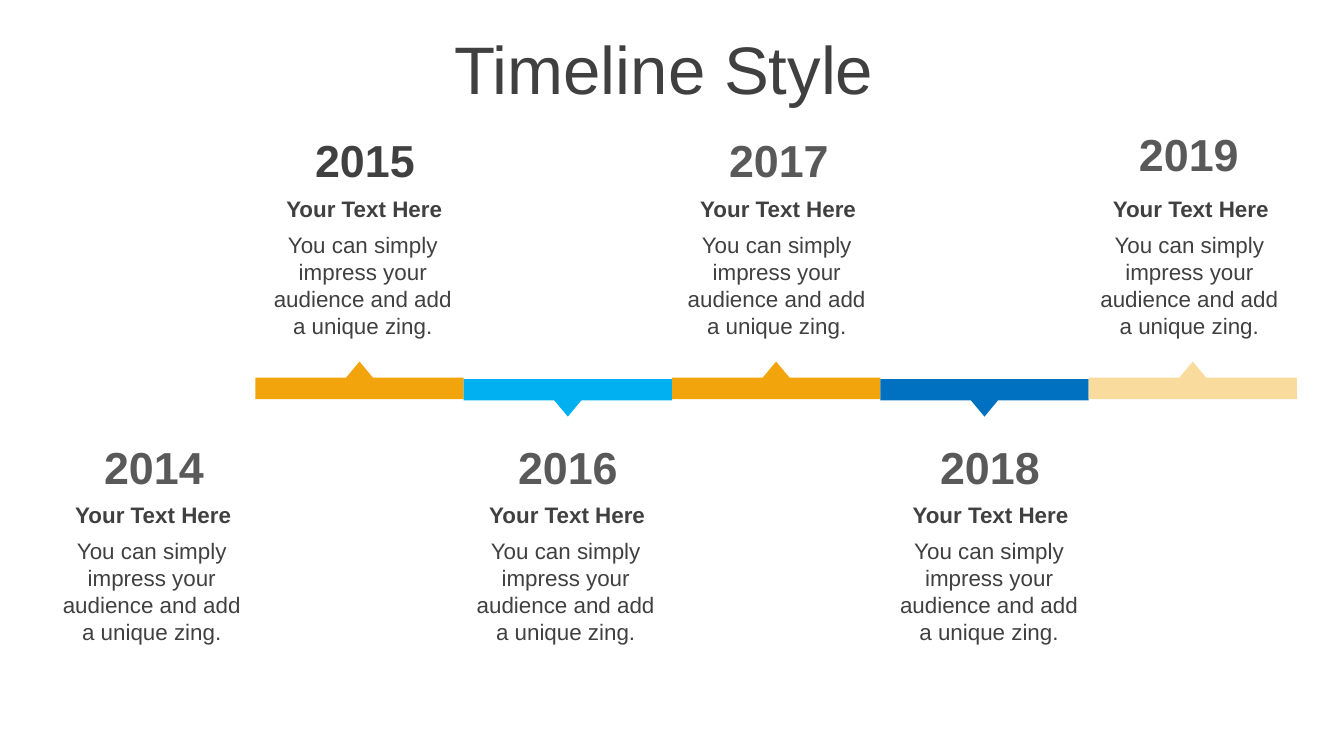
from pptx import Presentation
from pptx.dml.color import RGBColor
from pptx.enum.text import MSO_ANCHOR, PP_ALIGN
from pptx.util import Inches, Pt

CENTER = PP_ALIGN.CENTER
TOP, MIDDLE = MSO_ANCHOR.TOP, MSO_ANCHOR.MIDDLE

COLORS = {
    "dark": "404040", "gray": "595959", "orange": "F2A40D",
    "sky": "00B0F0", "blue": "0070C0", "sand": "FADB9E",
}
HEADING = "Your Text Here"
BODY = "You can simply impress your audience and add a unique zing."

# Year, left and top of the block, left and top of the year, year color
MILESTONES = [
    ("2014", 0.35, 3.22, 0.35, 3.22, "gray"),
    ("2015", 1.92, 0.94, 1.92, 0.94, "dark"),
    ("2016", 3.43, 3.22, 3.43, 3.22, "gray"),
    ("2017", 5.00, 0.94, 5.00, 0.94, "gray"),
    ("2018", 6.58, 3.22, 6.57, 3.22, "gray"),
    ("2019", 8.07, 0.94, 8.05, 0.89, "gray"),
]
SEGMENTS = ["orange", "sky", "orange", "blue", "sand"]


def rgb(name):
    return RGBColor.from_string(COLORS[name])


def add_text(s, text, x, y, w, h, size, color="dark", bold=False, anchor=TOP):
    tf = s.shapes.add_textbox(Inches(x), Inches(y), Inches(w), Inches(h)).text_frame
    tf.word_wrap = True
    tf.vertical_anchor = anchor
    p = tf.paragraphs[0]
    p.text = text
    p.alignment = CENTER
    p.font.name = "Arial"
    p.font.size = Pt(size)
    p.font.bold = bold
    p.font.color.rgb = rgb(color)


def add_segment(s, x, base, w, direction, color):
    """Bar with a pointer in its middle; direction is -1 for up, 1 for down."""
    bar, tip, half = 0.16, 0.28, 0.1
    mid = x + w / 2
    edge, point = base + direction * bar, base + direction * tip
    points = [(x + w, base), (x + w, edge), (mid + half, edge),
              (mid, point), (mid - half, edge), (x, edge)]
    fb = s.shapes.build_freeform(Inches(x), Inches(base), scale=1.0)
    fb.add_line_segments([(Inches(px), Inches(py)) for px, py in points], close=True)
    sp = fb.convert_to_shape()
    sp.shadow.inherit = False
    sp.fill.solid()
    sp.fill.fore_color.rgb = rgb(color)
    sp.line.fill.background()


def add_timeline(s, x, y, w, h):
    step = w / len(SEGMENTS)
    for i, color in enumerate(SEGMENTS):
        up = i % 2 == 0
        add_segment(s, x + i * step, y + h if up else y, step, -1 if up else 1, color)


def add_milestone(s, year, x, y, year_x, year_y, color):
    add_text(s, year, year_x, year_y, 1.59, 0.5, 24, color, bold=True)
    add_text(s, BODY, x, y + 0.73, 1.56, 0.91, 12)
    add_text(s, HEADING, x, y + 0.46, 1.58, 0.3, 12, bold=True)


def main():
    prs = Presentation()
    prs.slide_width = Inches(10)
    prs.slide_height = prs.slide_width * 9 // 16
    s = prs.slides.add_slide(prs.slide_layouts[6])

    # Colored bar
    add_timeline(s, 1.9, 2.82, 7.75, 0.15)

    # Years above and below the bar
    for milestone in MILESTONES:
        add_milestone(s, *milestone)

    # Title
    add_text(s, "Timeline Style", 1.06, 0.19, 7.76, 0.63, 36, anchor=MIDDLE)

    prs.save("out.pptx")


if __name__ == "__main__":
    main()
